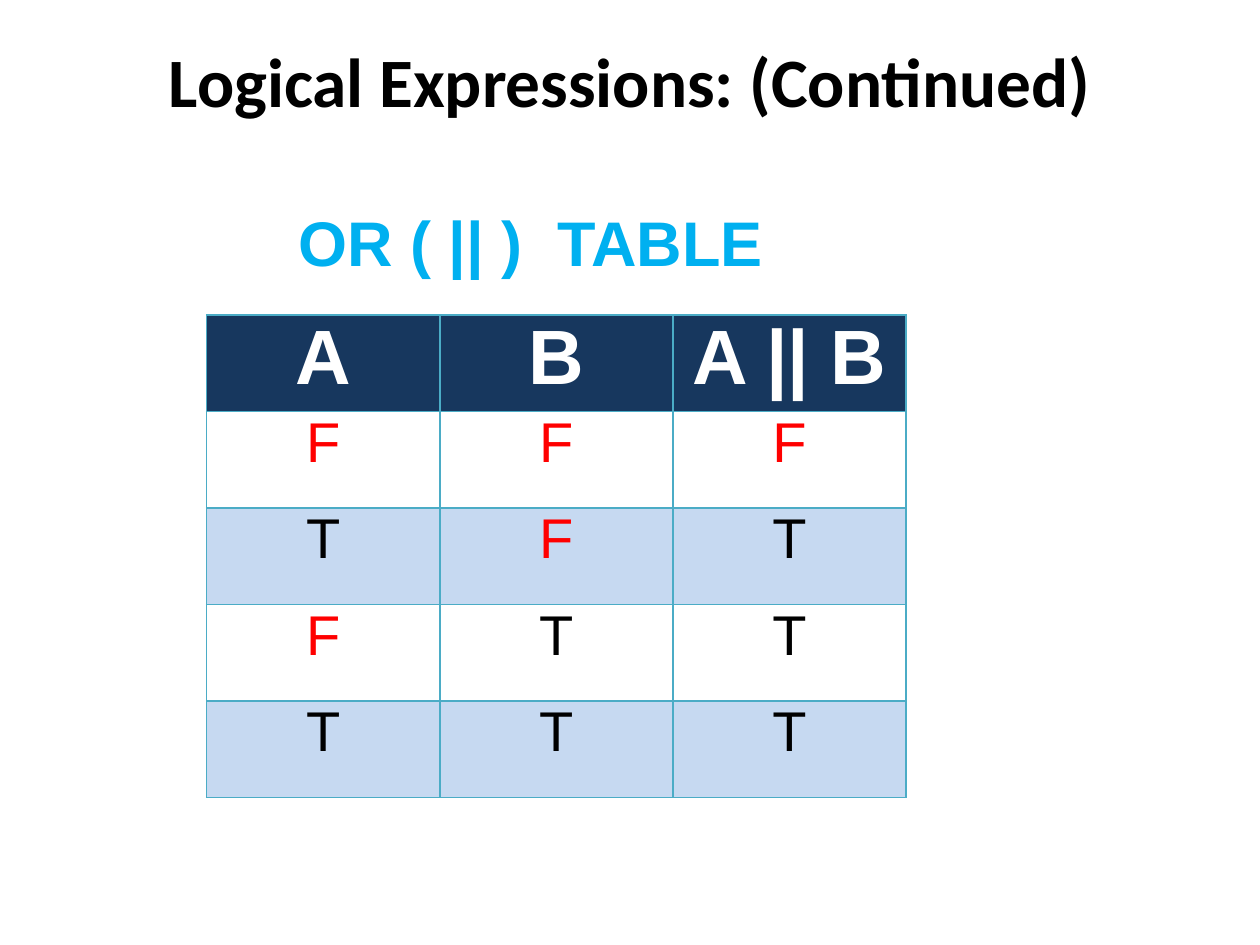
"""Build a slide showing the truth table of the logical OR operator."""
from dataclasses import dataclass

from lxml.etree import SubElement
from pptx import Presentation
from pptx.dml.color import RGBColor
from pptx.enum.text import MSO_ANCHOR, PP_ALIGN
from pptx.oxml.ns import qn
from pptx.util import Inches, Pt


@dataclass(frozen=True)
class Theme:
    heading_font: str = "Calibri"
    body_font: str = "Arial"
    black: str = "000000"
    white: str = "FFFFFF"
    red: str = "FF0000"
    sky: str = "00B0F0"
    navy: str = "17375E"
    pale_blue: str = "C6D9F1"
    border: str = "4BACC6"
    title_size: float = 39.6
    caption_size: float = 36
    header_size: float = 44
    value_size: float = 32


def write(frame, text, font, size, color, bold, align):
    paragraph = frame.paragraphs[0]
    paragraph.alignment = align
    run = paragraph.add_run()
    run.text = text
    run.font.name = font
    run.font.size = Pt(size)
    run.font.bold = bold
    run.font.color.rgb = RGBColor.from_string(color)


def add_borders(cell, color):
    properties = cell._tc.get_or_add_tcPr()
    for side in ("a:lnL", "a:lnR", "a:lnT", "a:lnB"):
        line = SubElement(properties, qn(side), w=str(Pt(1)))
        fill = SubElement(line, qn("a:solidFill"))
        SubElement(fill, qn("a:srgbClr"), val=color)


theme = Theme()
prs = Presentation()
prs.slide_width = Inches(10)
prs.slide_height = Inches(7.5)
slide = prs.slides.add_slide(prs.slide_layouts[6])

title = slide.shapes.add_textbox(Inches(0.5), Inches(0.3), Inches(9), Inches(1.25)).text_frame
title.word_wrap = True
title.vertical_anchor = MSO_ANCHOR.TOP
title.margin_top = 0
write(title, "Logical Expressions: (Continued)", theme.heading_font, theme.title_size,
      theme.black, True, PP_ALIGN.CENTER)

truth_rows = [
    ("A", "B", "A || B"),
    ("F", "F", "F"),
    ("T", "F", "T"),
    ("F", "T", "T"),
    ("T", "T", "T"),
]
truth_table = slide.shapes.add_table(
    len(truth_rows), 3, Inches(1.64), Inches(2.5), Inches(5.55), Inches(3.83)
).table
truth_table.first_row = False
truth_table.horz_banding = False
value_colors = {"F": theme.red, "T": theme.black}

for row_index, values in enumerate(truth_rows):
    is_header = row_index == 0
    for column_index, value in enumerate(values):
        cell = truth_table.cell(row_index, column_index)
        cell.margin_left = cell.margin_right = Inches(0.07)
        cell.margin_top = cell.margin_bottom = 0
        add_borders(cell, theme.border)
        if is_header:
            shade = theme.navy
        else:
            shade = theme.white if row_index % 2 else theme.pale_blue
        cell.fill.solid()
        cell.fill.fore_color.rgb = RGBColor.from_string(shade)
        write(cell.text_frame, value, theme.body_font,
              theme.header_size if is_header else theme.value_size,
              theme.white if is_header else value_colors[value],
              is_header, PP_ALIGN.CENTER)

caption = slide.shapes.add_textbox(Inches(2.27), Inches(1.56), Inches(3.98), Inches(0.71)).text_frame
caption.word_wrap = True
caption.vertical_anchor = MSO_ANCHOR.MIDDLE
write(caption, "OR ( || )  TABLE", theme.body_font, theme.caption_size,
      theme.sky, True, PP_ALIGN.LEFT)

prs.save("out.pptx")
